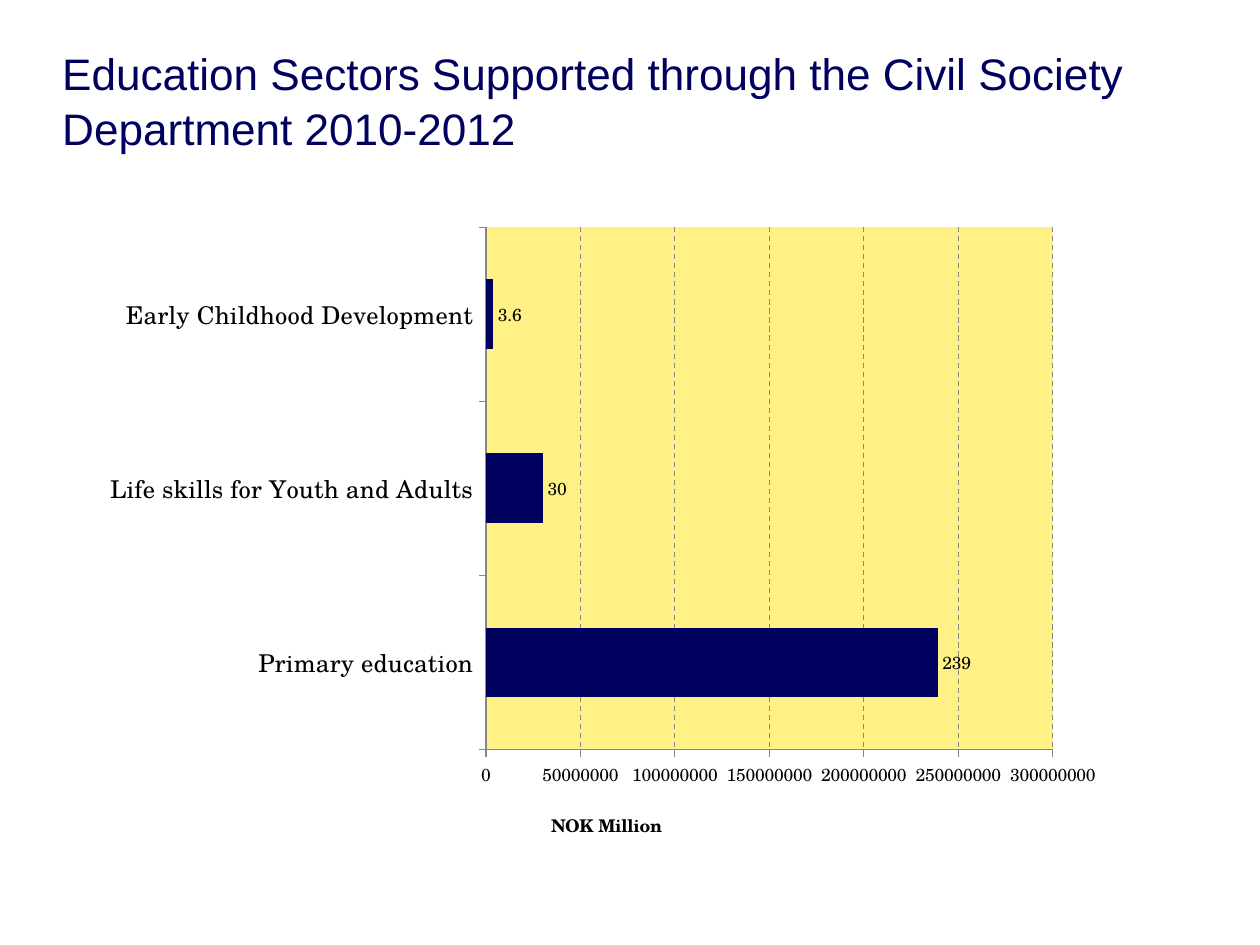
from dataclasses import dataclass

from lxml.etree import SubElement
from pptx import Presentation
from pptx.chart.data import CategoryChartData
from pptx.dml.color import RGBColor
from pptx.enum.chart import XL_CHART_TYPE, XL_LABEL_POSITION, XL_TICK_MARK
from pptx.enum.dml import MSO_LINE
from pptx.enum.text import MSO_ANCHOR, MSO_AUTO_SIZE, PP_ALIGN
from pptx.oxml import parse_xml
from pptx.oxml.ns import nsdecls, qn
from pptx.util import Cm, Pt


@dataclass(frozen=True)
class Theme:
    """Hold the colours, fonts and type sizes."""
    navy: RGBColor = RGBColor(0x00, 0x00, 0x5E)
    yellow: RGBColor = RGBColor(0xFF, 0xF1, 0x85)
    grey: RGBColor = RGBColor(0x87, 0x87, 0x87)
    black: RGBColor = RGBColor(0x00, 0x00, 0x00)
    title_font: str = "Arial"
    chart_font: str = "TeX Gyre Schola"
    title_size: float = 25.2
    category_size: float = 14
    chart_size: float = 10


def format_font(font, *, name, size, color, bold=False):
    """Apply typeface, size, colour and weight to a font."""
    font.name = name
    font.size = Pt(size)
    font.color.rgb = color
    font.bold = bold


def write_text(text_frame, text, *, align=None, line_spacing=None, **font_format):
    """Write one formatted paragraph into a text frame."""
    text_frame.text = text
    paragraph = text_frame.paragraphs[0]
    paragraph.alignment = align
    paragraph.line_spacing = line_spacing
    format_font(paragraph.runs[0].font, **font_format)


def make_layout(x, y, width=None, height=None):
    """Return a manual chart layout in fractions of the chart area."""
    layout = parse_xml(f"<c:layout {nsdecls('c')}><c:manualLayout/></c:layout>")
    settings = {"xMode": "edge", "yMode": "edge", "x": x, "y": y}
    if width is not None:
        settings = {"layoutTarget": "inner", **settings, "w": width, "h": height}
    for tag, value in settings.items():
        SubElement(layout[0], qn(f"c:{tag}")).set("val", str(value))
    return layout


class SlideBuilder:
    """Add styled elements to the current slide."""

    def __init__(self, slide, theme):
        """Keep the slide and its theme."""
        self.slide = slide
        self.theme = theme

    def add_title(self, text, left, top, width, height):
        """Place and format the title placeholder."""
        title = self.slide.shapes.title
        title.left, title.top, title.width, title.height = map(Cm, (left, top, width, height))
        frame = title.text_frame
        frame.word_wrap = True
        frame.auto_size = MSO_AUTO_SIZE.NONE
        frame.vertical_anchor = MSO_ANCHOR.MIDDLE
        write_text(frame, text, align=PP_ALIGN.LEFT, line_spacing=1.05,
                   name=self.theme.title_font, size=self.theme.title_size, color=self.theme.navy)

    def add_bar_chart(self, rows, axis_title, left, top, width, height):
        """Add a bar chart from rows of category, value and label."""
        theme = self.theme
        categories, values, labels = zip(*rows)
        data = CategoryChartData()
        data.categories = categories
        data.add_series("Series 1", values)
        chart = self.slide.shapes.add_chart(
            XL_CHART_TYPE.BAR_CLUSTERED, *map(Cm, (left, top, width, height)), data).chart
        chart.has_legend = False
        chart.has_title = False
        chart_format = {"name": theme.chart_font, "size": theme.chart_size, "color": theme.black}
        format_font(chart.font, **chart_format)
        self.style_plot(chart, labels, chart_format)
        self.style_axes(chart, axis_title, chart_format)

    def style_plot(self, chart, labels, chart_format):
        """Format the plot area, bars and data labels."""
        plot_area = chart.plots[0]._element.getparent()
        for layout in plot_area.findall(qn("c:layout")):
            plot_area.remove(layout)
        plot_area.insert(0, make_layout(0.38, 0.02, 0.55, 0.81))
        plot_area.append(parse_xml(
            f"<c:spPr {nsdecls('c', 'a')}><a:solidFill><a:srgbClr val=\"{self.theme.yellow}\"/>"
            "</a:solidFill><a:ln><a:noFill/></a:ln></c:spPr>"))
        plot = chart.plots[0]
        plot.gap_width = 150
        plot.vary_by_categories = False
        series = plot.series[0]
        series.format.fill.solid()
        series.format.fill.fore_color.rgb = self.theme.navy
        series.data_labels.show_value = True
        series.data_labels.position = XL_LABEL_POSITION.OUTSIDE_END
        for index, text in enumerate(labels):
            label = series.points[index].data_label
            write_text(label.text_frame, text, **chart_format)
            label.position = XL_LABEL_POSITION.OUTSIDE_END

    def style_axes(self, chart, axis_title, chart_format):
        """Format both axes, the gridlines and the value axis title."""
        theme = self.theme
        category_axis, value_axis = chart.category_axis, chart.value_axis
        for axis, size in ((category_axis, theme.category_size), (value_axis, theme.chart_size)):
            axis.major_tick_mark = XL_TICK_MARK.OUTSIDE
            axis.minor_tick_mark = XL_TICK_MARK.NONE
            axis.format.line.color.rgb = theme.grey
            axis.format.line.width = Pt(0.75)
            format_font(axis.tick_labels.font, **{**chart_format, "size": size})
        value_axis.minimum_scale = 0
        value_axis.maximum_scale = 300_000_000
        value_axis.major_unit = 50_000_000
        value_axis.has_major_gridlines = True
        gridline = value_axis.major_gridlines.format.line
        gridline.color.rgb = theme.grey
        gridline.width = Pt(0.75)
        gridline.dash_style = MSO_LINE.DASH
        title = value_axis.axis_title
        write_text(title.text_frame, axis_title, bold=True, **chart_format)
        for layout in title._element.findall(qn("c:layout")):
            title._element.remove(layout)
        title._element.find(qn("c:tx")).addnext(make_layout(0.44, 0.92))


def main():
    """Build and save the presentation."""
    presentation = Presentation()
    presentation.slide_width = Cm(25.4)
    presentation.slide_height = Cm(19.05)
    slide = presentation.slides.add_slide(presentation.slide_layouts[5])
    builder = SlideBuilder(slide, Theme())
    builder.add_title(
        "Education Sectors Supported through the Civil Society Department 2010-2012",
        1, 1.2, 23.7, 1.6)
    builder.add_bar_chart(
        [("Primary education", 239_000_000, "239"),
         ("Life skills for Youth and Adults", 30_000_000, "30"),
         ("Early Childhood Development", 3_700_000, "3.6")],
        "NOK Million", 1.9, 4.32, 20.78, 13)
    presentation.save("out.pptx")


if __name__ == "__main__":
    main()
